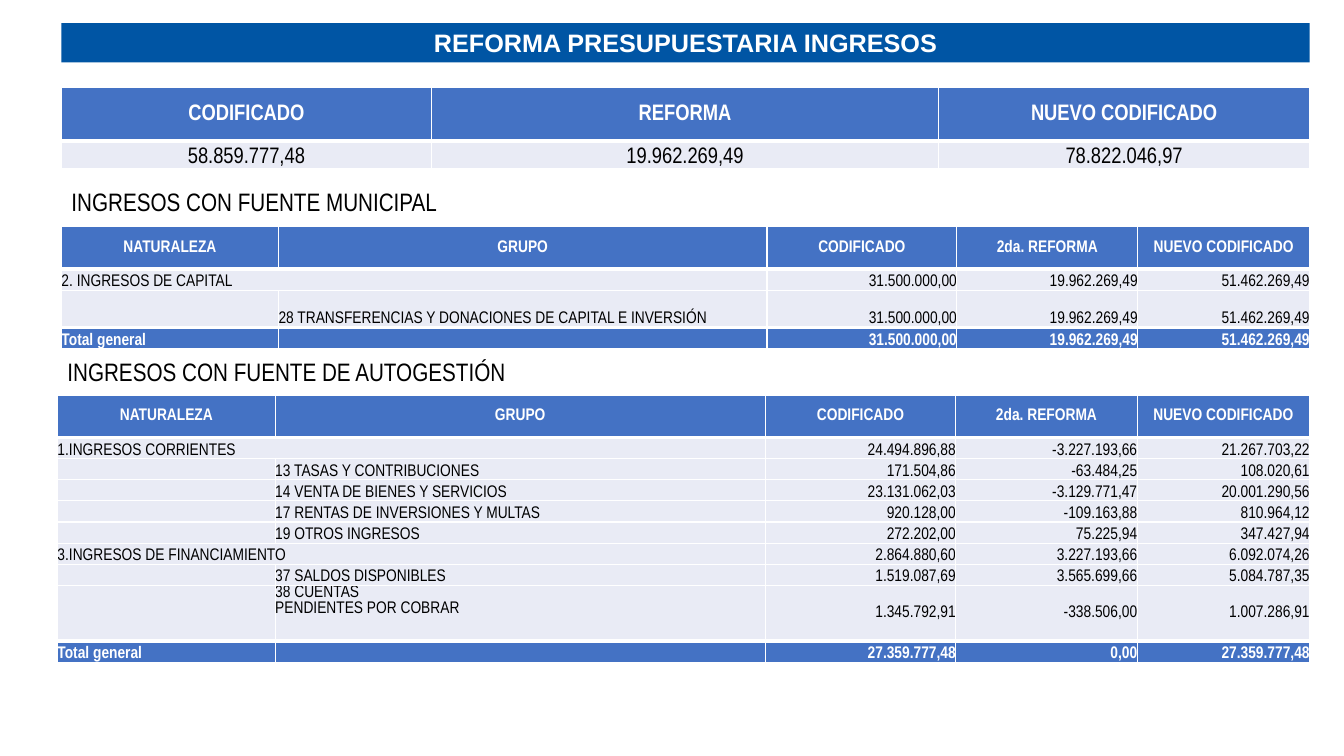
import pptx
import pptx.util
import pptx.dml.color
import pptx.enum.text
import pptx.oxml.ns
from lxml import etree

Inches, Pt = pptx.util.Inches, pptx.util.Pt
ALIGN, ANCHOR = pptx.enum.text.PP_ALIGN, pptx.enum.text.MSO_ANCHOR
qn = pptx.oxml.ns.qn

COLORS = {"banner": "0055A4", "header": "4472C4", "body": "E9EBF5",
          "white": "FFFFFF", "black": "000000"}
NARROW = "Arial Narrow"
LEFT, WIDTH = 0.61, 12.38
OUTDENT = 0.04
ROW = 0.21
TITLE = "REFORMA PRESUPUESTARIA INGRESOS"
HEAD = ("NATURALEZA", "GRUPO", "CODIFICADO", "2da. REFORMA", "NUEVO CODIFICADO")
DETAIL_COLS = (2.16, 4.86, 1.89, 1.8, 1.71)
SUMMARY_COLS = (3.67, 5.03, 3.68)

SUMMARY = [
    ("CODIFICADO", "REFORMA", "NUEVO CODIFICADO"),
    ("58.859.777,48", "19.962.269,49", "78.822.046,97"),
]
MUNICIPAL = [
    HEAD,
    ("2. INGRESOS DE CAPITAL", "", "31.500.000,00", "19.962.269,49", "51.462.269,49"),
    ("", "28 TRANSFERENCIAS Y DONACIONES DE CAPITAL E INVERSIÓN",
     "31.500.000,00", "19.962.269,49", "51.462.269,49"),
    ("Total general", "", "31.500.000,00", "19.962.269,49", "51.462.269,49"),
]
AUTOGESTION = [
    HEAD,
    ("1.INGRESOS CORRIENTES", "", "24.494.896,88", "-3.227.193,66", "21.267.703,22"),
    ("", "13 TASAS Y CONTRIBUCIONES", "171.504,86", "-63.484,25", "108.020,61"),
    ("", "14 VENTA DE BIENES Y SERVICIOS", "23.131.062,03", "-3.129.771,47", "20.001.290,56"),
    ("", "17 RENTAS DE INVERSIONES Y MULTAS", "920.128,00", "-109.163,88", "810.964,12"),
    ("", "19 OTROS INGRESOS", "272.202,00", "75.225,94", "347.427,94"),
    ("3.INGRESOS DE FINANCIAMIENTO", "", "2.864.880,60", "3.227.193,66", "6.092.074,26"),
    ("", "37 SALDOS DISPONIBLES", "1.519.087,69", "3.565.699,66", "5.084.787,35"),
    ("", "38 CUENTAS\nPENDIENTES POR COBRAR", "1.345.792,91", "-338.506,00", "1.007.286,91"),
    ("Total general", "", "27.359.777,48", "0,00", "27.359.777,48"),
]
HEADINGS = [
    ("INGRESOS CON FUENTE MUNICIPAL", LEFT, 1.8, 3.85),
    ("INGRESOS CON FUENTE DE AUTOGESTIÓN", LEFT - OUTDENT, 3.49, 4.59),
]


def rgb(name):
    return pptx.dml.color.RGBColor.from_string(COLORS[name])


def write(p, text, size, font, color, bold=False):
    for i, line in enumerate(text.split("\n")):
        if i:
            p.add_line_break()
        r = p.add_run()
        r.text = line
        r.font.size, r.font.name, r.font.bold = Pt(size), font, bold
        r.font.color.rgb = rgb(color)


def set_borders(cell, top, bottom):
    tcPr = cell._tc.get_or_add_tcPr()
    for i, (side, width) in enumerate((("L", 1), ("R", 1), ("T", top), ("B", bottom))):
        ln = etree.Element(qn("a:ln" + side), w=str(Pt(width)))
        fill = etree.SubElement(ln, qn("a:solidFill"))
        etree.SubElement(fill, qn("a:srgbClr"), val=COLORS["white"])
        tcPr.insert(i, ln)


def fill_cell(cell, text, size, align, anchor, dark):
    cell.margin_left = cell.margin_right = cell.margin_top = cell.margin_bottom = 0
    cell.vertical_anchor = anchor
    cell.fill.solid()
    cell.fill.fore_color.rgb = rgb("header" if dark else "body")
    p = cell.text_frame.paragraphs[0]
    p.alignment = align
    if text:
        write(p, text, size, NARROW, "white" if dark else "black", dark)
    else:
        etree.SubElement(p._p, qn("a:endParaRPr"), sz=str(size * 100))


def add_grid(slide, rows, left, top, width, cols, heights, size):
    detail = len(cols) == len(HEAD)
    last = len(rows) - 1
    frame = slide.shapes.add_table(len(rows), len(cols), Inches(left), Inches(top),
                                   Inches(width), Inches(sum(heights)))
    table = frame.table
    table.first_row = table.horz_banding = False
    for col, share in zip(table.columns, cols):
        col.width = Inches(width * share / sum(cols))
    for r, values in enumerate(rows):
        table.rows[r].height = Inches(heights[r])
        total = detail and r == last
        before_total = detail and r == last - 1
        for c, text in enumerate(values):
            align = ALIGN.CENTER if r == 0 or not detail else ALIGN.RIGHT if c > 1 else ALIGN.LEFT
            tall = heights[r] > 2 * ROW
            anchor = ANCHOR.MIDDLE if r == 0 or tall else ANCHOR.BOTTOM
            if "\n" in text:
                anchor = ANCHOR.TOP
            cell = table.cell(r, c)
            fill_cell(cell, text, size, align, anchor, r == 0 or total)
            set_borders(cell, 3 if r == 1 or total else 1, 3 if r == 0 or before_total else 1)
        if detail and 0 < r < last and values[0]:
            table.cell(r, 0).merge(table.cell(r, 1))


def main():
    prs = pptx.Presentation()
    prs.slide_width, prs.slide_height = Inches(13.33), Inches(7.5)
    slide = prs.slides.add_slide(prs.slide_layouts[5])

    sp = slide.shapes.title
    sp.left, sp.top, sp.width, sp.height = (Inches(v) for v in (LEFT, 0.23, WIDTH, 0.39))
    sp.fill.solid()
    sp.fill.fore_color.rgb = rgb("banner")
    tf = sp.text_frame
    tf.auto_size = pptx.enum.text.MSO_AUTO_SIZE.NONE
    tf.vertical_anchor = ANCHOR.MIDDLE
    tf.paragraphs[0].alignment = ALIGN.CENTER
    write(tf.paragraphs[0], TITLE, 18, "Arial", "white", True)

    add_grid(slide, SUMMARY, LEFT, 0.87, WIDTH, SUMMARY_COLS, [0.53, 0.27], 16)
    add_grid(slide, MUNICIPAL, LEFT, 2.25, WIDTH, DETAIL_COLS, [2 * ROW, ROW, 0.37, ROW], 12)
    add_grid(slide, AUTOGESTION, LEFT - OUTDENT, 3.92, WIDTH + OUTDENT, DETAIL_COLS,
             [2 * ROW] + [ROW] * 7 + [0.55, ROW], 12)

    for text, left, top, width in HEADINGS:
        sp = slide.shapes.add_textbox(Inches(left), Inches(top), Inches(width), Inches(0.4))
        sp.text_frame.word_wrap = False
        write(sp.text_frame.paragraphs[0], text, 18, NARROW, "black")

    prs.save("out.pptx")


if __name__ == "__main__":
    main()
